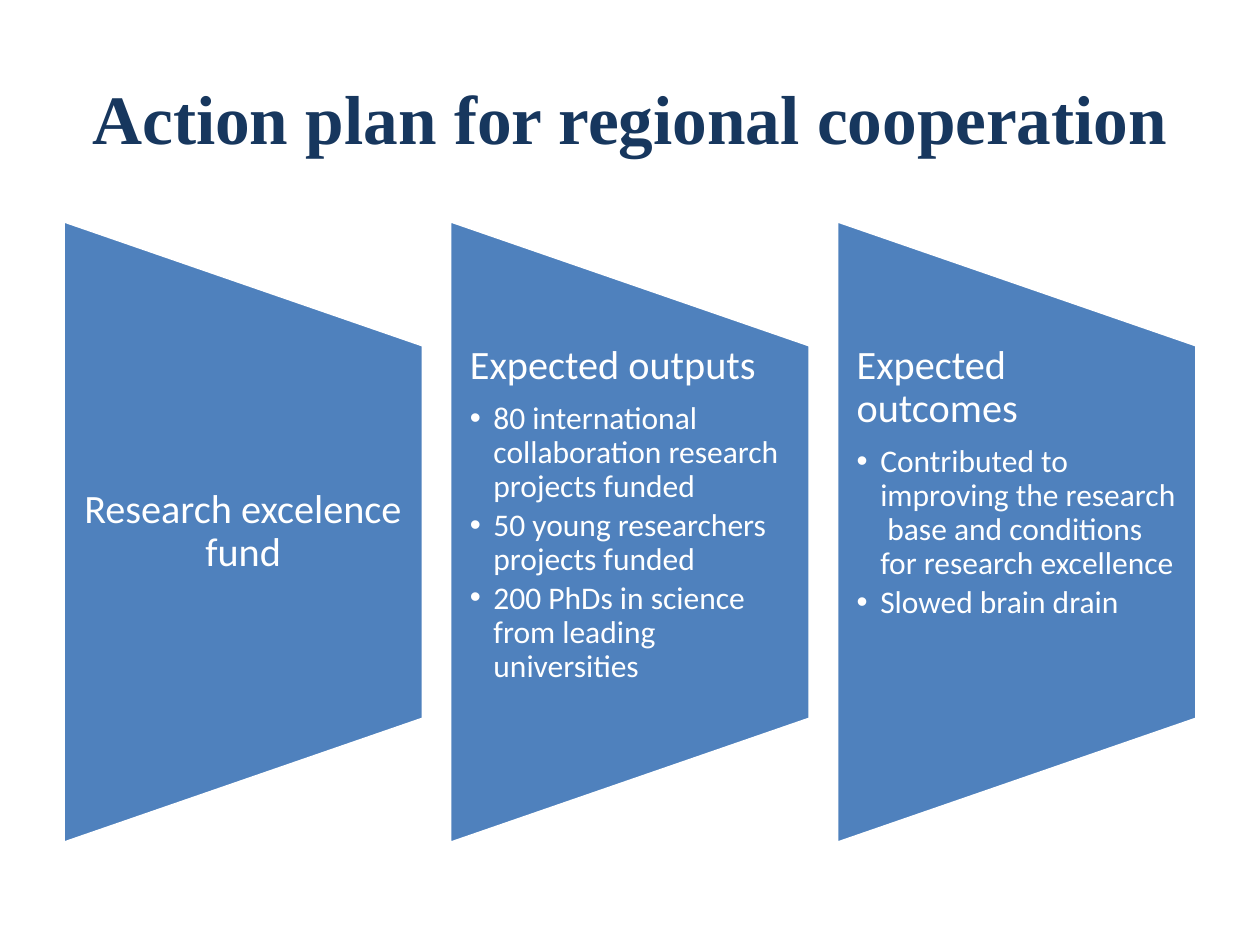
from lxml import etree
from pptx import Presentation
from pptx import util as u
from pptx.dml.color import RGBColor
from pptx.enum import shapes, text
from pptx.oxml.ns import qn

LEFT, PITCH, WIDTH, MIDDLE = 36, 221, 206, 304
PANEL_H, TEXT_H, INDENT = 356, 214, 13.5
CENTER = text.PP_ALIGN.CENTER
HEAD = {"size": 23, "after": 8, "level": 0, "margin": 0}
ITEM = {"size": 18, "after": 2.7, "level": 1, "margin": INDENT}
LISTS = [
    ("Expected outputs", [
        "80 international collaboration research projects funded",
        "50 young researchers projects funded",
        "200 PhDs in science from leading universities",
    ]),
    ("Expected\voutcomes", [
        "Contributed to improving the research  base and conditions for research excellence",
        "Slowed brain drain",
    ]),
]


def rgb(value):
    """Return the colour for a hex string."""
    return RGBColor.from_string(value)


def apply(obj, values):
    """Set each named attribute on an object."""
    for name, value in values.items():
        setattr(obj, name, value)


def place(sp, left, top, width, height):
    """Position a shape in points."""
    box = {"left": left, "top": top, "width": width, "height": height}
    apply(sp, {name: u.Pt(value) for name, value in box.items()})


def style_font(font, name, size, color, bold=False):
    """Format a font."""
    apply(font, {"name": name, "size": u.Pt(size), "bold": bold})
    font.color.rgb = rgb(color)


def set_title(s, words):
    """Fill and format the title placeholder."""
    sp = s.shapes.title
    place(sp, 36, 21.6, 648, 90)
    tf = sp.text_frame
    tf.text = words
    apply(tf, {"auto_size": text.MSO_AUTO_SIZE.NONE,
               "vertical_anchor": text.MSO_ANCHOR.MIDDLE})
    p = tf.paragraphs[0]
    p.alignment = CENTER
    style_font(p.runs[0].font, "Times New Roman", 39.6, "17375E", True)


def add_panel(s, column):
    """Add the trapezoid of one column and return its left edge."""
    left = LEFT + column * PITCH
    sp = s.shapes.add_shape(shapes.MSO_SHAPE.FLOWCHART_MANUAL_OPERATION, 0, 0, 0, 0)
    place(sp, left + (WIDTH - PANEL_H) / 2, MIDDLE - WIDTH / 2, PANEL_H, WIDTH)
    sp.rotation = 270
    sp.shadow.inherit = False
    sp.fill.solid()
    sp.fill.fore_color.rgb = rgb("4F81BD")
    sp.line.color.rgb = rgb("FFFFFF")
    sp.line.width = u.Pt(2)
    return left


def setup_text(sp, left, anchor):
    """Place a panel's text over it and return the text frame."""
    place(sp, left, MIDDLE - TEXT_H / 2, WIDTH, TEXT_H)
    tf = sp.text_frame
    apply(tf, {"word_wrap": True, "auto_size": text.MSO_AUTO_SIZE.NONE,
               "vertical_anchor": anchor, "margin_left": u.Pt(11.5),
               "margin_right": u.Pt(11.5), "margin_top": 0, "margin_bottom": 0})
    return tf


def write(p, words, style, align=text.PP_ALIGN.LEFT):
    """Write one heading or bullet paragraph."""
    p.text = words
    apply(p, {"level": style["level"], "alignment": align, "line_spacing": 0.9,
              "space_before": u.Pt(0), "space_after": u.Pt(style["after"])})
    for r in p.runs:
        style_font(r.font, "Calibri", style["size"], "FFFFFF")
    margin = u.Pt(style["margin"])
    pPr = p._p.get_or_add_pPr()
    pPr.set("marL", str(margin))
    pPr.set("indent", str(-margin))
    if margin:
        etree.SubElement(pPr, qn("a:buChar")).set("char", "•")
    else:
        etree.SubElement(pPr, qn("a:buNone"))


def add_list(s, column, sp, heading, items):
    """Add a panel with a heading and bullets in a body placeholder."""
    left = add_panel(s, column)
    s.shapes.element.append(sp.element)
    tf = setup_text(sp, left, text.MSO_ANCHOR.TOP)
    write(tf.paragraphs[0], heading, HEAD)
    for item in items:
        write(tf.add_paragraph(), item, ITEM)


def add_label(s, column, words):
    """Add a panel with a centred label."""
    left = add_panel(s, column)
    tf = setup_text(s.shapes.add_textbox(0, 0, 0, 0), left, text.MSO_ANCHOR.MIDDLE)
    write(tf.paragraphs[0], words, HEAD, CENTER)


def main():
    """Build the slide."""
    prs = Presentation()
    apply(prs, {"slide_width": u.Pt(720), "slide_height": u.Pt(540)})
    s = prs.slides.add_slide(prs.slide_layouts[3])
    bodies = [s.placeholders[1], s.placeholders[2]]
    set_title(s, "Action plan for regional cooperation")
    add_label(s, 0, "Research excelence fund")
    for column, (sp, (heading, items)) in enumerate(zip(bodies, LISTS), 1):
        add_list(s, column, sp, heading, items)
    prs.save("out.pptx")


if __name__ == "__main__":
    main()
